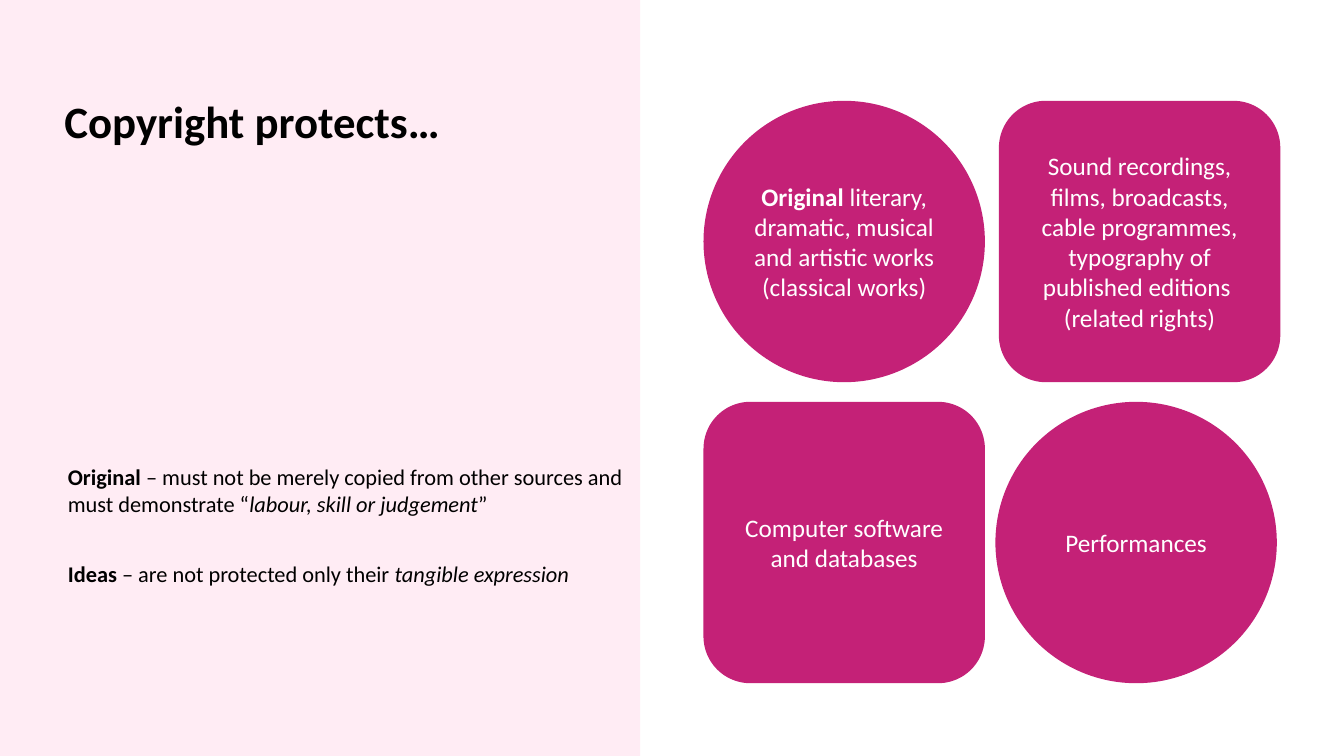
from dataclasses import dataclass

import pptx
import pptx.dml.color
import pptx.enum.shapes
import pptx.enum.text
import pptx.oxml.xmlchemy
import pptx.shapes.autoshape
import pptx.slide
import pptx.text.text
import pptx.util
from lxml import etree
from pptx.oxml.ns import qn

Pt = pptx.util.Pt
Shape = pptx.enum.shapes.MSO_SHAPE
Align = pptx.enum.text.PP_ALIGN
Anchor = pptx.enum.text.MSO_ANCHOR

COLOURS = {"panel": "FFECF4", "tile": "C42177", "dark": "000000", "light": "FFFFFF"}
FONT = "Calibri"
TILE_SIZE = 201
TILE_INSET = 6


@dataclass(frozen=True)
class Span:
    text: str
    bold: bool = False
    italic: bool = False


@dataclass(frozen=True)
class Tile:
    kind: pptx.enum.shapes.MSO_SHAPE
    left: float
    top: float
    paragraphs: list[list[Span]]


DEFINITIONS = [
    [
        Span("Original", bold=True),
        Span(" – must not be merely copied from other sources and must demonstrate “"),
        Span("labour, skill or judgement", italic=True),
        Span("”"),
    ],
    [
        Span("Ideas", bold=True),
        Span(" – are not protected only their "),
        Span("tangible expression", italic=True),
    ],
]

TILES = [
    Tile(Shape.ROUNDED_RECTANGLE, 502.5, 287, [[Span("Computer software and databases")]]),
    Tile(
        Shape.ROUNDED_RECTANGLE,
        713.5,
        72,
        [
            [Span("Sound recordings, films, broadcasts, cable programmes, typography of published editions ")],
            [Span("(related rights)")],
        ],
    ),
    Tile(
        Shape.OVAL,
        502.5,
        72,
        [
            [
                Span("Original", bold=True),
                Span(" literary, dramatic, musical and artistic works (classical works)"),
            ]
        ],
    ),
    Tile(Shape.OVAL, 711, 287, [[Span("Performances")]]),
]


def colour(name: str) -> pptx.dml.color.RGBColor:
    return pptx.dml.color.RGBColor.from_string(COLOURS[name])


def format_font(font: pptx.text.text.Font, size: float, colour_name: str) -> None:
    font.name = FONT
    font.size = Pt(size)
    font.color.rgb = colour(colour_name)


def set_frame(frame: pptx.text.text.TextFrame, inset: float, anchor: Anchor) -> None:
    frame.word_wrap = True
    frame.auto_size = pptx.enum.text.MSO_AUTO_SIZE.NONE
    frame.vertical_anchor = anchor
    frame.margin_left = frame.margin_right = Pt(inset)
    frame.margin_top = frame.margin_bottom = Pt(inset)


def place(box: pptx.shapes.autoshape.Shape, left: float, top: float, width: float, height: float) -> None:
    box.left, box.top, box.width, box.height = Pt(left), Pt(top), Pt(width), Pt(height)


def write_paragraphs(
    frame: pptx.text.text.TextFrame,
    paragraphs: list[list[Span]],
    size: float,
    colour_name: str,
    align: Align,
    gap: float = 0,
) -> None:
    for index, spans in enumerate(paragraphs):
        para = frame.add_paragraph() if index else frame.paragraphs[0]
        para.alignment = align
        para.space_before = Pt(gap if index else 0)
        for span in spans:
            run = para.add_run()
            run.text = span.text
            format_font(run.font, size, colour_name)
            run.font.bold = span.bold
            run.font.italic = span.italic


def add_filled_shape(
    page: pptx.slide.Slide,
    kind: Shape,
    left: float,
    top: float,
    width: float,
    height: float,
    fill: str,
) -> pptx.shapes.autoshape.Shape:
    box = page.shapes.add_shape(kind, Pt(left), Pt(top), Pt(width), Pt(height))
    box.shadow.inherit = False
    box.fill.solid()
    box.fill.fore_color.rgb = colour(fill)
    box.line.fill.background()
    return box


def add_tile(page: pptx.slide.Slide, tile: Tile) -> None:
    box = add_filled_shape(page, tile.kind, tile.left, tile.top, TILE_SIZE, TILE_SIZE, "tile")
    set_frame(box.text_frame, TILE_INSET, Anchor.MIDDLE)
    write_paragraphs(box.text_frame, tile.paragraphs, 18, "light", Align.CENTER)


def fill_title(title: pptx.shapes.autoshape.Shape) -> None:
    place(title, 46, 72, 388, 67.5)
    set_frame(title.text_frame, 0, Anchor.TOP)
    title.text_frame.text = "Copyright protects…"
    para = title.text_frame.paragraphs[0]
    para.alignment = Align.LEFT
    para.line_spacing = 0.88
    format_font(para.runs[0].font, 32, "dark")
    para.runs[0].font.bold = True


def fill_definitions(body: pptx.shapes.autoshape.Shape) -> None:
    place(body, 48.5, 270, 409, 230)
    set_frame(body.text_frame, 0, Anchor.TOP)
    body.text_frame.margin_top = Pt(61)
    write_paragraphs(body.text_frame, DEFINITIONS, 16, "dark", Align.LEFT, gap=31)
    for para in body.text_frame.paragraphs:
        properties = para._p.get_or_add_pPr()
        properties.set("marL", "0")
        properties.set("indent", "0")
        etree.SubElement(properties, qn("a:buNone"))


def main() -> None:
    deck = pptx.Presentation()
    deck.slide_width, deck.slide_height = Pt(960), Pt(540)
    page = deck.slides.add_slide(deck.slide_layouts[1])
    title, body = page.shapes.title, page.placeholders[1]
    panel = add_filled_shape(page, Shape.RECTANGLE, 0, 0, 457.2, 540, "panel")
    title.element.addprevious(panel.element)
    fill_title(title)
    fill_definitions(body)
    for tile in TILES:
        add_tile(page, tile)
    deck.save("out.pptx")


if __name__ == "__main__":
    main()
